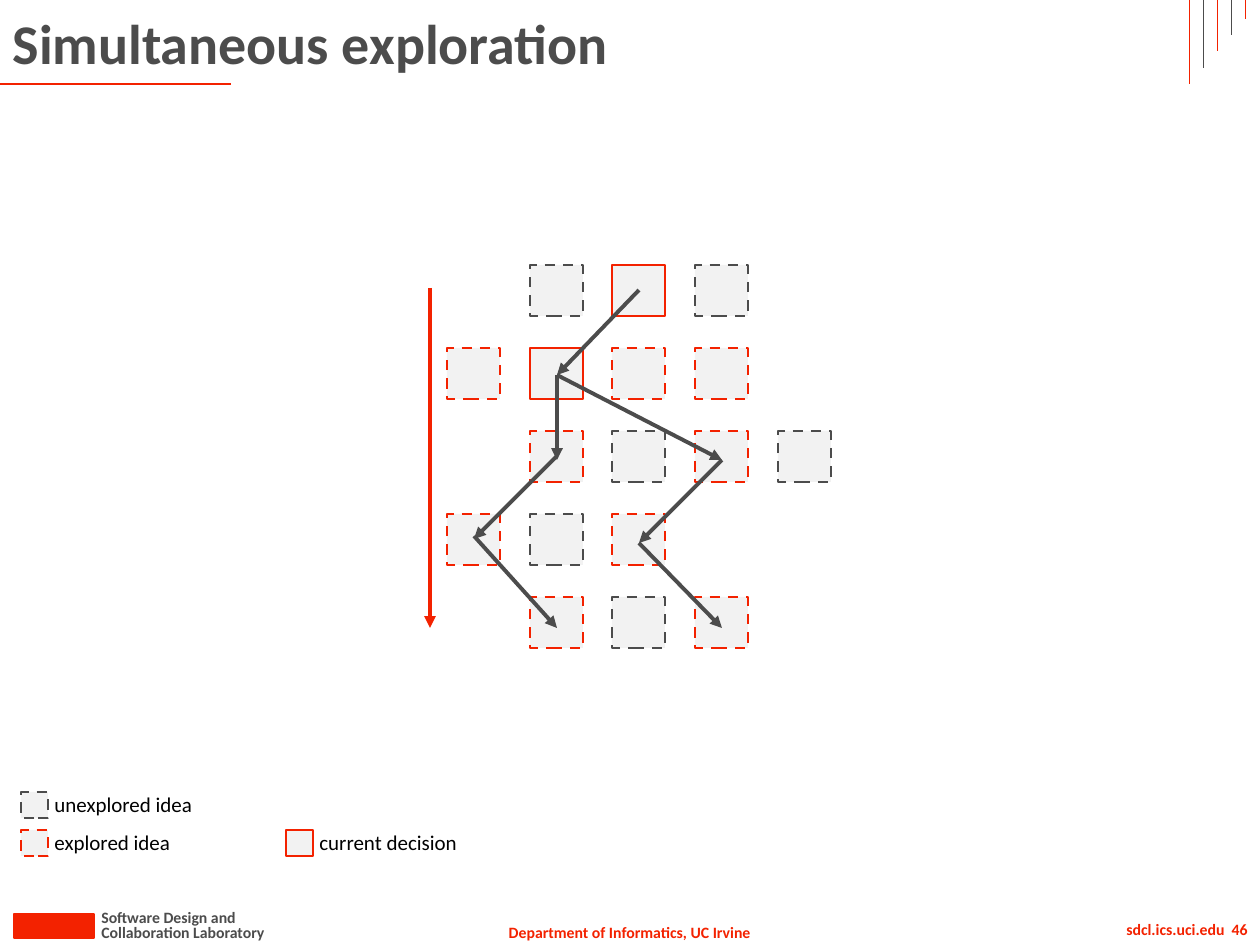
from dataclasses import dataclass

from lxml.etree import SubElement
from pptx import Presentation
from pptx.dml.color import RGBColor
from pptx.enum.dml import MSO_LINE
from pptx.enum.shapes import MSO_CONNECTOR, MSO_SHAPE
from pptx.enum.text import MSO_ANCHOR, MSO_AUTO_SIZE, PP_ALIGN
from pptx.oxml.ns import qn
from pptx.slide import Slide
from pptx.util import Emu, Pt

COLORS = {"red": "F32200", "gray": "4C4C4C", "fill": "F2F2F2", "black": "000000"}
FONT = "Calibri"
EMU_PER_PX = 914400 / 126


@dataclass(frozen=True)
class Style:
    color: str
    dashed: bool


@dataclass(frozen=True)
class Label:
    text: str
    left: int
    top: int
    width: int
    height: int
    size: int
    color: str
    bold: bool = True
    align: PP_ALIGN = PP_ALIGN.LEFT
    wrap: bool = False


@dataclass(frozen=True)
class Line:
    start: tuple[int, int]
    end: tuple[int, int]
    color: str = "gray"
    width: float = 2.25
    arrow: bool = True


@dataclass(frozen=True)
class LegendEntry:
    text: str
    left: int
    top: int
    width: int
    style: Style


UNEXPLORED = Style("gray", True)
EXPLORED = Style("red", True)
DECISION = Style("red", False)
STYLES = {"u": UNEXPLORED, "e": EXPLORED, "d": DECISION}

IDEA_ROWS = [".udu.", "edee.", ".eueu", "eue..", ".eue."]
GRID_LEFT, GRID_TOP = 447, 265
COLUMN_STEP, ROW_STEP = 82.7, 83
IDEA_WIDTH, IDEA_HEIGHT = 53, 51

ARROWS = [
    Line((639, 290), (557, 375)),
    Line((430, 288), (430, 628), "red"),
    Line((557, 375), (722, 460)),
    Line((722, 460), (639, 543)),
    Line((639, 543), (722, 628)),
    Line((557, 375), (557, 460)),
    Line((557, 456), (474, 539)),
    Line((474, 536), (557, 628)),
]

LEGEND = [
    LegendEntry("unexplored idea", 21, 792, 165, UNEXPLORED),
    LegendEntry("explored idea", 21, 830, 142, EXPLORED),
    LegendEntry("current decision", 286, 830, 164, DECISION),
]

FOOTER = [
    Label("Department of Informatics, UC Irvine", 494, 917, 271, 32, 9, "red",
          align=PP_ALIGN.CENTER),
    Label("Collaboration Laboratory", 89, 917, 193, 32, 9, "gray"),
    Label("Software Design and", 89, 902, 163, 32, 9, "gray"),
    Label("sdcl.ics.uci.edu  46", 988, 914, 272, 32, 9, "red",
          align=PP_ALIGN.RIGHT, wrap=True),
]


def px(value: int) -> Emu:
    return Emu(round(value * EMU_PER_PX))


def rgb(name: str) -> RGBColor:
    return RGBColor.from_string(COLORS[name])


def format_text(shape, size: int, color: str, bold: bool, align: PP_ALIGN) -> None:
    paragraph = shape.text_frame.paragraphs[0]
    paragraph.alignment = align
    font = paragraph.font
    font.name, font.size, font.bold = FONT, Pt(size), bold
    font.color.rgb = rgb(color)


def add_title(page: Slide, text: str) -> None:
    title = page.shapes.title
    title.left, title.top = px(0), px(0)
    title.width, title.height = px(1187), px(84)
    title.text_frame.text = text
    title.text_frame.vertical_anchor = MSO_ANCHOR.MIDDLE
    title.text_frame.auto_size = MSO_AUTO_SIZE.NONE
    format_text(title, 32, "gray", True, PP_ALIGN.LEFT)


def add_label(page: Slide, label: Label) -> None:
    box = page.shapes.add_textbox(
        px(label.left), px(label.top), px(label.width), px(label.height))
    box.text_frame.text = label.text
    box.text_frame.word_wrap = label.wrap
    box.text_frame.auto_size = MSO_AUTO_SIZE.SHAPE_TO_FIT_TEXT
    format_text(box, label.size, label.color, label.bold, label.align)


def add_rectangle(page: Slide, left: int, top: int, width: int, height: int,
                  fill: str, style: Style) -> None:
    rectangle = page.shapes.add_shape(
        MSO_SHAPE.RECTANGLE, px(left), px(top), px(width), px(height))
    rectangle.shadow.inherit = False
    rectangle.fill.solid()
    rectangle.fill.fore_color.rgb = rgb(fill)
    rectangle.line.color.rgb = rgb(style.color)
    rectangle.line.width = Pt(1.5)
    if style.dashed:
        rectangle.line.dash_style = MSO_LINE.DASH


def add_line(page: Slide, line: Line) -> None:
    connector = page.shapes.add_connector(
        MSO_CONNECTOR.STRAIGHT, *map(px, line.start + line.end))
    connector.line.color.rgb = rgb(line.color)
    connector.line.width = Pt(line.width)
    if line.arrow:
        SubElement(connector.line._get_or_add_ln(), qn("a:tailEnd"), type="triangle")
    SubElement(connector._element.spPr, qn("a:effectLst"))


def add_frame(page: Slide) -> None:
    add_rectangle(page, 14, 914, 80, 24, "red", DECISION)
    for label in FOOTER:
        add_label(page, label)
    add_line(page, Line((0, 84), (231, 84), "red", 1.5, False))
    for index in range(5):
        left = 1189 + 14 * index
        bottom = round(84 - 16.3 * index)
        color = "gray" if index % 2 else "red"
        add_line(page, Line((left, bottom), (left, 0), color, 0.5, False))


def add_idea_grid(page: Slide) -> None:
    for row, marks in enumerate(IDEA_ROWS):
        for column, mark in enumerate(marks):
            if mark in STYLES:
                add_rectangle(page, GRID_LEFT + round(COLUMN_STEP * column),
                              GRID_TOP + ROW_STEP * row, IDEA_WIDTH, IDEA_HEIGHT,
                              "fill", STYLES[mark])


def add_legend(page: Slide) -> None:
    for entry in LEGEND:
        add_rectangle(page, entry.left, entry.top, 27, 26, "fill", entry.style)
        add_label(page, Label(entry.text, entry.left + 21, entry.top - 7,
                              entry.width, 38, 12, "black", bold=False))


def main() -> None:
    deck = Presentation()
    deck.slide_width, deck.slide_height = px(1260), px(945)
    page = deck.slides.add_slide(deck.slide_layouts[5])
    add_frame(page)
    add_title(page, "Simultaneous exploration")
    add_idea_grid(page)
    for arrow in ARROWS:
        add_line(page, arrow)
    add_legend(page)
    deck.save("out.pptx")


if __name__ == "__main__":
    main()
